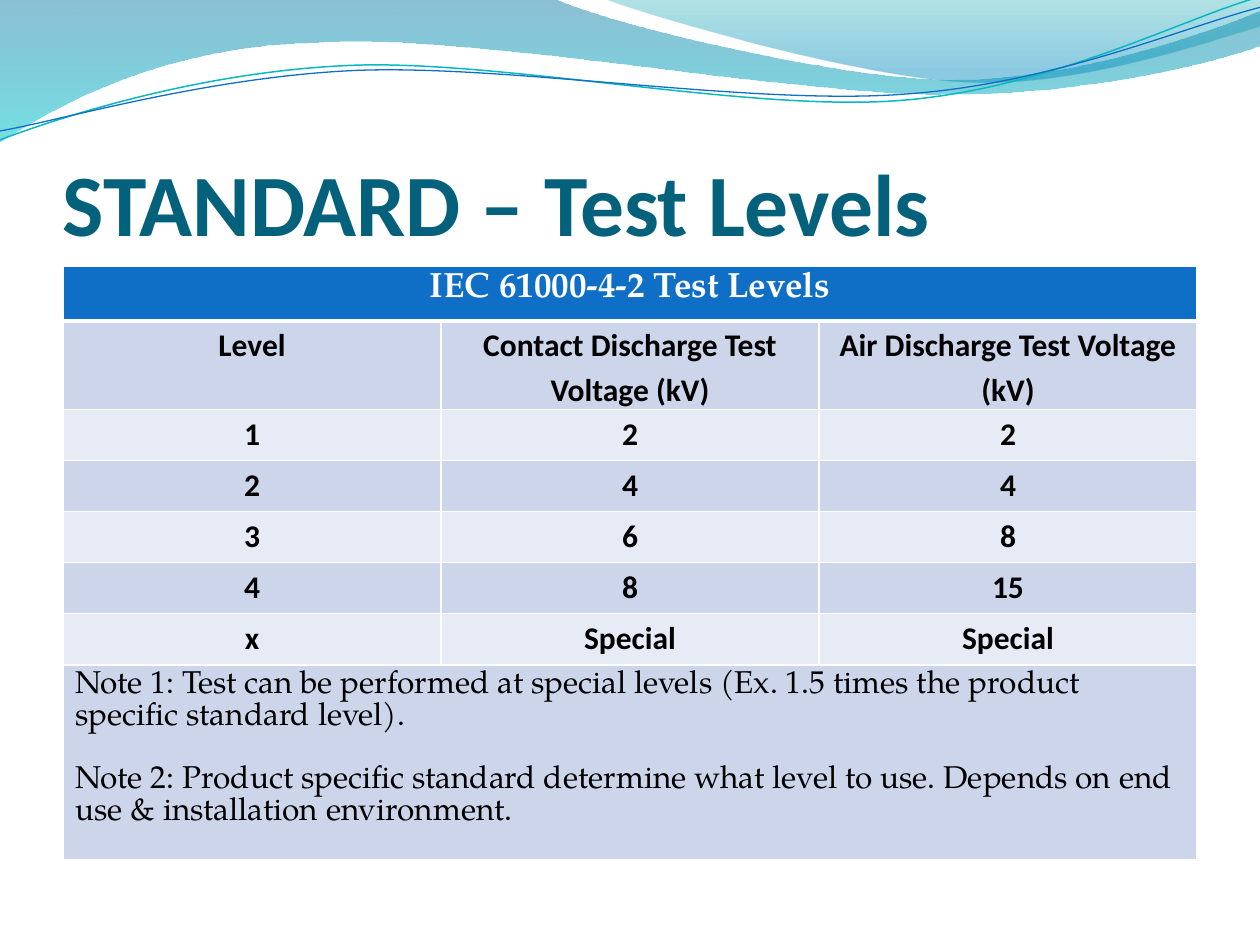
from lxml.etree import SubElement
from pptx import Presentation
from pptx.dml.color import RGBColor
from pptx.enum.text import MSO_ANCHOR, PP_ALIGN
from pptx.oxml.ns import qn
from pptx.util import Cm, Pt

WHITE = RGBColor(0xFF, 0xFF, 0xFF)
BLACK = RGBColor(0, 0, 0)
BLUE = RGBColor(0x0F, 0x6F, 0xC6)
AQUA = RGBColor(0x0A, 0xB8, 0xBF)
TEAL = RGBColor(0x04, 0x61, 0x7B)
DARK = RGBColor(0xCC, 0xD5, 0xEA)
LIGHT = RGBColor(0xE7, 0xEB, 0xF5)
DEEP = RGBColor(0x00, 0x74, 0xA1)
CYAN = RGBColor(0x00, 0xC6, 0xCF)
GREEN = RGBColor(0x00, 0xA1, 0xA9)
SKY = RGBColor(0x00, 0x8B, 0xBF)
SERIF = "TeX Gyre Pagella"

deck = Presentation()
deck.slide_width, deck.slide_height = Cm(25.4), Cm(19.05)
slide = deck.slides.add_slide(deck.slide_layouts[6])


def add_wave(start, parts, closed):
    """Draw an outline in cm; a part is one point, or three for a Bezier curve."""
    spots = [(Cm(x), Cm(y)) for x, y in [start, *sum(parts, [])]]
    pen = slide.shapes.build_freeform(*spots[0], scale=1.0)
    pen.add_line_segments(spots[1:], close=closed)
    wave = pen.convert_to_shape()
    wave.shadow.inherit = False
    steps = iter(list(wave._element.iter(qn("a:lnTo"))))
    for part in parts:
        first = next(steps)
        if len(part) == 3:
            first.tag = qn("a:cubicBezTo")
            for step in (next(steps), next(steps)):
                first.append(step[0])
                step.getparent().remove(step)
    return wave


def style(par, size, font, color, bold):
    """Format the runs and the paragraph end, which also sets the line height."""
    for run in par.runs:
        run.font.size, run.font.name, run.font.bold = Pt(size), font, bold
        run.font.color.rgb = color
    end = SubElement(par._p, qn("a:endParaRPr"), sz=str(size * 100))
    SubElement(end, qn("a:latin"), typeface=font)


# Shaded waves: start, parts, gradient stops (position, colour, opacity in %)
bands = [
    ((0, 0), [
        [(11.18, -0.02)],
        [(12.09, 0.43), (16.87, 1.6), (19.25, 1.6)],
        [(21.67, 1.6), (24.33, 0.66), (25.4, 0.23)],
        [(25.43, 0.91)],
        [(24.97, 1.12), (22.1, 1.93), (18.95, 1.9)],
        [(15.8, 1.9), (9.7, 0.71), (6.53, 0.86)],
        [(3.28, 0.91), (1.17, 2.11), (-0.03, 2.87)],
        [(0, 0)],
    ], [(0, DEEP, 45), (1, CYAN, 55)]),
    ((12.17, -0.03), [
        [(12.93, 0.28), (17.32, 1.57), (19.53, 1.65)],
        [(21.74, 1.75), (24.41, 0.81), (25.4, 0.53)],
        [(25.4, 0)],
        [(12.17, -0.03)],
    ], [(0, GREEN, 30), (0.8, SKY, 45)]),
]
for start, parts, stops in bands:
    band = add_wave(start, parts, True)
    band.line.fill.background()
    band.fill.gradient()
    band.fill.gradient_angle = 270
    for stop, (place, color, alpha) in zip(band.fill.gradient_stops, stops):
        stop.position = place
        stop.color.rgb = color
    tints = list(band._element.spPr.iter(qn("a:srgbClr")))
    for tint, (place, color, alpha) in zip(tints, stops):
        SubElement(tint, qn("a:alpha"), val=str(alpha * 1000))

# Thin wave lines
lines = [
    ((0, 2.82), [
        [(1.22, 2.36), (4.01, 1.45), (7.04, 1.32)],
        [(10.03, 1.19), (15.06, 2.26), (18.11, 2.03)],
        [(21.16, 1.8), (23.83, 0.38), (25.35, -0.05)],
    ], AQUA, 0.85),
    ((0, 2.64), [
        [(1.19, 2.44), (4.17, 1.55), (7.19, 1.42)],
        [(10.24, 1.3), (15.16, 2.13), (18.21, 1.9)],
        [(21.23, 1.7), (23.9, 0.53), (25.4, 0.15)],
    ], BLUE, 0.75),
]
for start, parts, color, width in lines:
    line = add_wave(start, parts, False)
    line.fill.background()
    line.line.color.rgb = color
    line.line.width = Pt(width)

# Title
frame = slide.shapes.add_textbox(Cm(1.27), Cm(1.95), Cm(22.86), Cm(3.18)).text_frame
frame.word_wrap = True
frame.vertical_anchor = MSO_ANCHOR.BOTTOM
frame.margin_left = frame.margin_right = frame.margin_bottom = 0
frame.text = "STANDARD – Test Levels"
style(frame.paragraphs[0], 50, "Calibri", TEAL, True)

# Table of test levels
rows = [
    ["IEC 61000-4-2 Test Levels", "", ""],
    ["Level", "Contact Discharge Test Voltage (kV)", "Air Discharge Test Voltage\n(kV)"],
    ["1", "2", "2"],
    ["2", "4", "4"],
    ["3", "6", "8"],
    ["4", "8", "15"],
    ["x", "Special", "Special"],
    ["Note 1: Test can be performed at special levels (Ex. 1.5 times the product "
     "specific standard level).\n"
     "Note 2: Product specific standard determine what level to use. Depends on end "
     "use & installation environment.", "", ""],
]
last = len(rows) - 1
heights = [1.01, 1.78] + [1.03] * 5 + [3.45]
table = slide.shapes.add_table(
    len(rows), 3, Cm(1.27), Cm(5.37), Cm(22.86), Cm(sum(heights))).table
for col in table.columns:
    col.width = Cm(7.62)

for r, texts in enumerate(rows):
    table.rows[r].height = Cm(heights[r])
    for c, text in enumerate(texts):
        cell = table.cell(r, c)
        props = cell._tc.get_or_add_tcPr()
        for side in "LRTB":
            thick = (r, side) in ((0, "B"), (1, "T"))
            edge = SubElement(props, qn("a:ln" + side), w=str(Pt(3 if thick else 1)))
            fill = SubElement(edge, qn("a:solidFill"))
            SubElement(fill, qn("a:srgbClr"), val=str(WHITE))
        cell.fill.solid()
        cell.fill.fore_color.rgb = BLUE if r == 0 else DARK if r % 2 else LIGHT
        cell.text_frame.text = text
        if 0 < r < last:
            cell.margin_left = cell.margin_right = Cm(0.18)
            cell.margin_top = cell.margin_bottom = 0
        for par in cell.text_frame.paragraphs:
            if r == 0:
                par.alignment = PP_ALIGN.CENTER
                style(par, 20, SERIF, WHITE, True)
            elif r < last:
                par.alignment = PP_ALIGN.CENTER
                par.line_spacing = 1.15
                style(par, 18, "Calibri", BLACK, True)
            else:
                style(par, 18, SERIF, BLACK, False)

for r in (0, last):
    table.cell(r, 0).merge(table.cell(r, 2))
table.cell(last, 0).text_frame.paragraphs[0].space_after = Pt(18)

deck.save("out.pptx")
